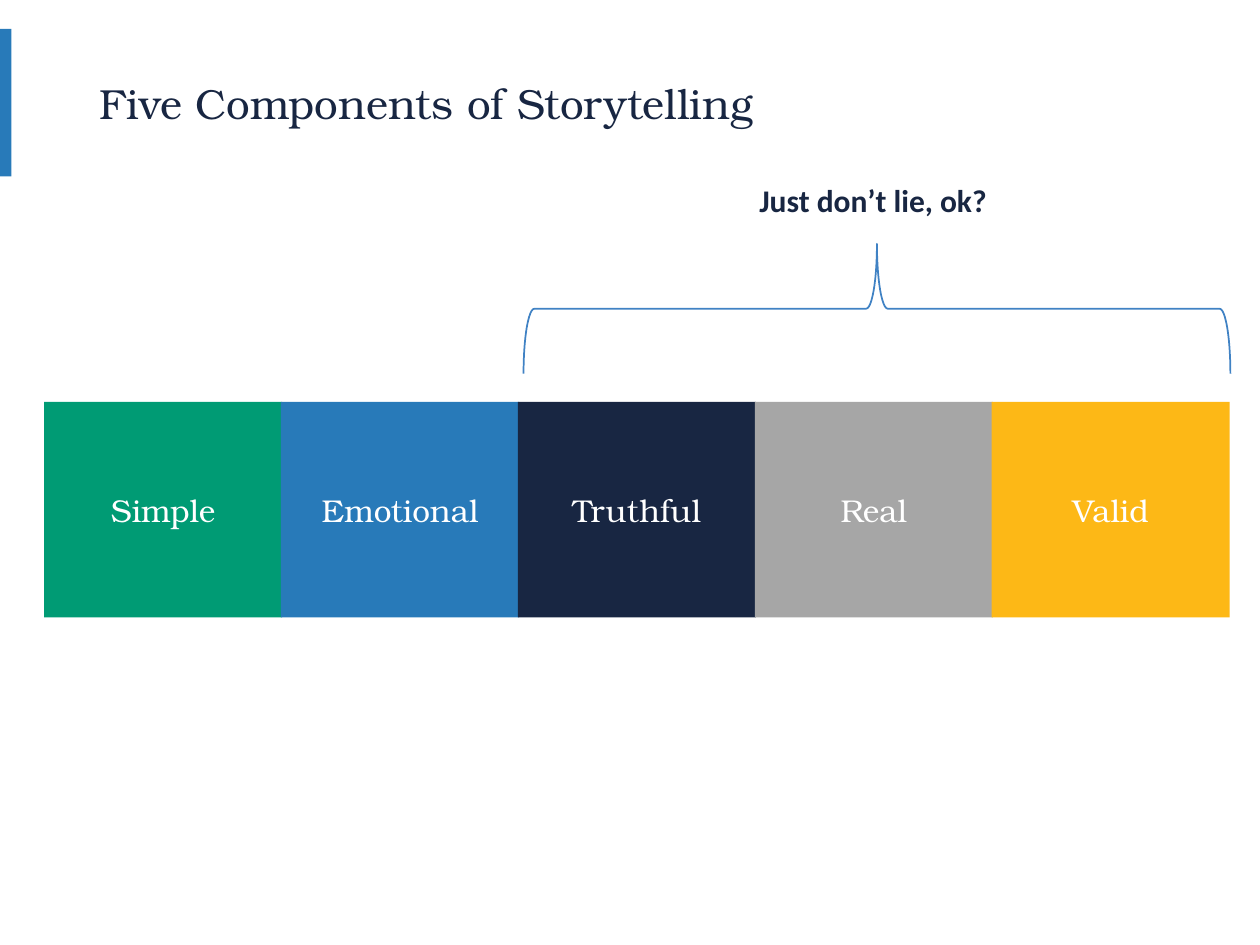
from pptx import Presentation
from pptx.dml.color import RGBColor
from pptx.enum.shapes import MSO_SHAPE
from pptx.enum.text import MSO_ANCHOR, PP_ALIGN
from pptx.util import Inches, Pt

RECT, BRACE = MSO_SHAPE.RECTANGLE, MSO_SHAPE.RIGHT_BRACE
MIDDLE, TOP = MSO_ANCHOR.MIDDLE, MSO_ANCHOR.TOP
LEFT, CENTER = PP_ALIGN.LEFT, PP_ALIGN.CENTER
SERIF, SANS = "TeX Gyre Bonum", "Calibri"
COLORS = {
    "navy": "182642", "blue": "287AB9", "green": "009B74",
    "gray": "A6A6A6", "gold": "FDB816", "white": "FFFFFF", "line": "4082C4",
}
PARTS = [("Simple", "green"), ("Emotional", "blue"), ("Truthful", "navy"),
         ("Real", "gray"), ("Valid", "gold")]
GRID_X, GRID_Y, PITCH, TILE_W, TILE_H = 0.35, 3.19, 1.88, 1.89, 1.71


def color(name):
    return RGBColor.from_string(COLORS[name])


def box(*lengths):
    return [Inches(n) for n in lengths]


def write(shape, text, size, ink, font=SERIF, bold=False, align=CENTER,
          anchor=MIDDLE):
    frame = shape.text_frame
    frame.word_wrap = True
    frame.vertical_anchor = anchor
    para = frame.paragraphs[0]
    para.alignment = align
    run = para.add_run()
    run.text = text
    run.font.name, run.font.size, run.font.bold = font, Pt(size), bold
    run.font.color.rgb = color(ink)
    return para


def add_block(slide, place, fill):
    block = slide.shapes.add_shape(RECT, *box(*place))
    block.shadow.inherit = False
    block.fill.solid()
    block.fill.fore_color.rgb = color(fill)
    block.line.fill.background()
    return block


def add_title(slide, text):
    title = slide.shapes.title
    title.left, title.top, title.width, title.height = box(0.69, 0.31, 8.62, 1.06)
    write(title, text, 24, "navy", align=LEFT).line_spacing = 0.9


def add_tiles(slide):
    for col, (text, fill) in enumerate(PARTS):
        place = (GRID_X + col * PITCH, GRID_Y, TILE_W, TILE_H)
        write(add_block(slide, place, fill), text, 18, "white")


def add_brace(slide, mid_x, mid_y, span, depth):
    """Draw a brace that opens down, turned about its centre."""
    place = (mid_x - depth / 2, mid_y - span / 2, depth, span)
    brace = slide.shapes.add_shape(BRACE, *box(*place))
    brace.rotation = 270
    brace.shadow.inherit = False
    brace.fill.background()
    brace.line.color.rgb = color("line")
    brace.line.width = Pt(1)


def add_note(slide, text):
    note = slide.shapes.add_textbox(*box(5.26, 1.39, 3.34, 0.4))
    write(note, text, 18, "navy", font=SANS, bold=True, anchor=TOP)


def main():
    deck = Presentation()
    deck.slide_width, deck.slide_height = box(10, 7.5)
    slide = deck.slides.add_slide(deck.slide_layouts[5])
    add_block(slide, (0, 0.23, 0.09, 1.17), "blue")
    add_title(slide, "Five Components of Storytelling")
    add_tiles(slide)
    add_brace(slide, 6.96, 2.45, 5.61, 1.03)
    add_note(slide, "Just don’t lie, ok?")
    deck.save("out.pptx")


if __name__ == "__main__":
    main()
